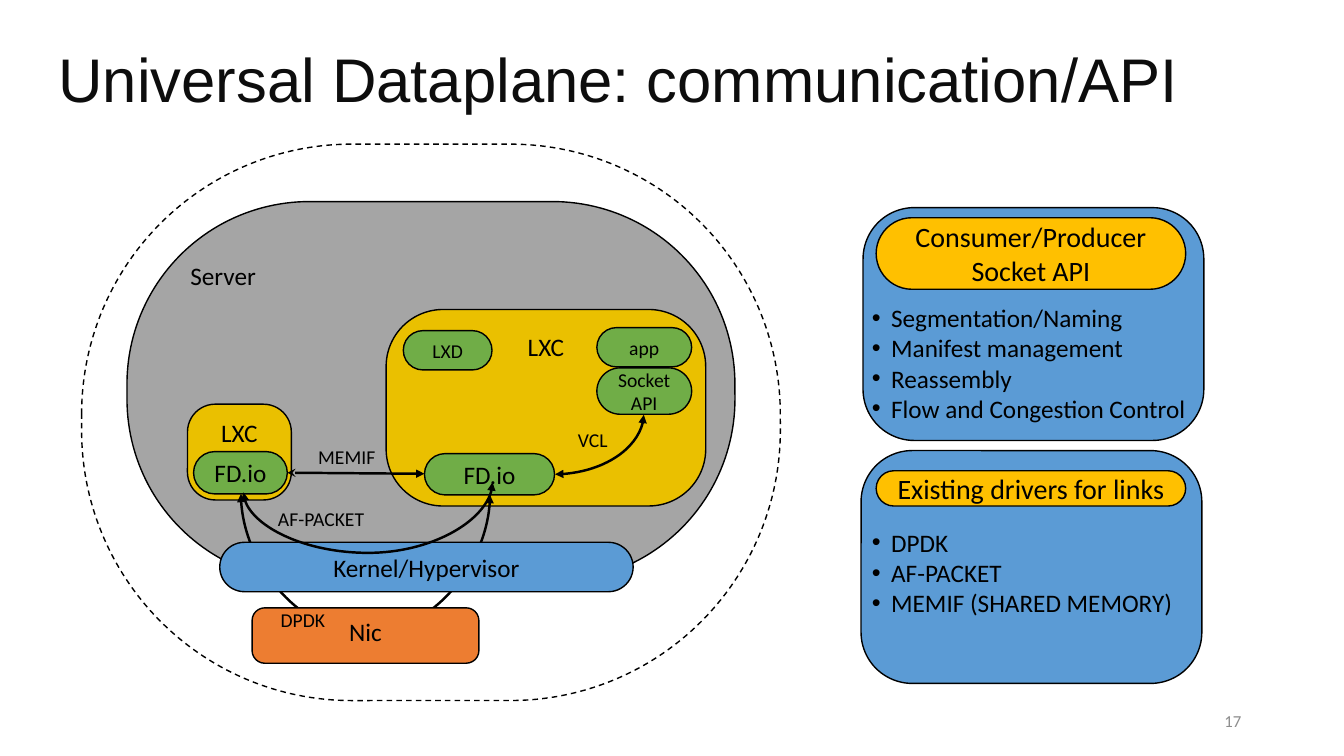
"""Build the Universal Dataplane communication/API slide."""
from pptx import Presentation
from pptx.dml.color import RGBColor
from pptx.enum.dml import MSO_LINE
from pptx.enum.shapes import MSO_CONNECTOR, MSO_SHAPE
from pptx.enum.text import MSO_ANCHOR, PP_ALIGN
from pptx.oxml.ns import qn
from pptx.util import Inches, Pt
from lxml import etree

ROUND = MSO_SHAPE.ROUNDED_RECTANGLE
CURVE, LINE = MSO_CONNECTOR.CURVE, MSO_CONNECTOR.STRAIGHT
DASH = MSO_LINE.DASH
TOP, MID = MSO_ANCHOR.TOP, MSO_ANCHOR.MIDDLE
LEFT, MIDDLE, RIGHT = PP_ALIGN.LEFT, PP_ALIGN.CENTER, PP_ALIGN.RIGHT
color = RGBColor.from_string
BLACK, GRAY, GOLD, GREEN = "000000", "A5A5A5", "EAC000", "70AD47"
BLUE, AMBER, ORANGE = "5B9BD5", "FFC000", "ED7D31"

deck = Presentation()
deck.slide_width, deck.slide_height = Inches(13.33), Inches(7.5)
slide = deck.slides.add_slide(deck.slide_layouts[6])


def box(text, x, y, w, h, fill=None, size=18, adj=0.5, anchor=MID, align=MIDDLE,
        dash=None, ink=BLACK, face="Calibri", space=1.0, bullet=False):
    place = [Inches(v) for v in (x, y, w, h)]
    if adj is None:
        shape = slide.shapes.add_textbox(*place)
    else:
        shape = slide.shapes.add_shape(ROUND, *place)
        shape.adjustments[0] = adj
        shape.shadow.inherit = False
        if fill:
            shape.fill.solid()
            shape.fill.fore_color.rgb = color(fill)
        else:
            shape.fill.background()
        if fill or dash:
            shape.line.color.rgb = color(BLACK)
            shape.line.width = Pt(1)
            shape.line.dash_style = dash
        else:
            shape.line.fill.background()
    frame = shape.text_frame
    frame.word_wrap, frame.vertical_anchor = True, anchor
    if not text:
        return
    for i, line in enumerate(text.split("\n")):
        para = frame.add_paragraph() if i else frame.paragraphs[0]
        para.alignment, para.line_spacing = align, space
        if bullet:
            props = para._p.get_or_add_pPr()
            props.set("marL", str(Inches(0.69)))
            props.set("indent", str(Inches(-0.19)))
            etree.SubElement(props, qn("a:buFont")).set("typeface", "Arial")
            etree.SubElement(props, qn("a:buChar")).set("char", "•")
        run = para.add_run()
        run.text = line
        for key, val in {"size": Pt(size), "name": face}.items():
            setattr(run.font, key, val)
        run.font.color.rgb = color(ink)


def link(kind, ends, head="triangle", preset=None, adj=None):
    wire = slide.shapes.add_connector(kind, *[Inches(v) for v in ends])
    wire.line.color.rgb = color(BLACK)
    wire.line.width = Pt(1.75)
    props = wire._element.spPr
    for tag, tip in (("a:headEnd", head), ("a:tailEnd", "triangle")):
        etree.SubElement(wire.line._get_or_add_ln(), qn(tag)).set("type", tip)
    etree.SubElement(props, qn("a:effectLst"))
    if preset:
        props.find(qn("a:xfrm")).set("rot", "5400000")
        geom = props.find(qn("a:prstGeom"))
        geom.set("prst", preset)
        if adj:
            guide = etree.SubElement(geom.find(qn("a:avLst")), qn("a:gd"))
            guide.set("name", "adj1")
            guide.set("fmla", f"val {round(adj * 100000)}")


box("Universal Dataplane: communication/API", 0.48, 0.19, 12.3, 1.25, size=44,
    adj=None, align=LEFT, ink="0D0D0D", face="Arial", space=0.9)

box("Server", 1.26, 2, 6.03, 3.77, GRAY, adj=0.48, anchor=TOP, align=LEFT)
box("", 0.81, 1.43, 6.93, 5.52, adj=0.485, dash=DASH)
for place in ((1.86, 4.01, 1.03, 0.95), (3.83, 3.07, 3.17, 1.95)):
    box("LXC", *place, GOLD, adj=0.29, anchor=TOP)
for text, size, *place in (
        ("FD.io", 18, 1.92, 4.48, 0.93, 0.42),
        ("FD.io", 18, 4.21, 4.5, 1.29, 0.41),
        ("Socket API", 14, 5.92, 3.65, 0.94, 0.46),
        ("app", 14, 5.92, 3.25, 0.94, 0.39),
        ("LXD", 14, 4, 3.28, 0.88, 0.39)):
    box(text, *place, GREEN, size)

link(LINE, (2.85, 4.69, 4.21, 4.7), head="stealth")
link(CURVE, (3.63, 3.67, 3.62, 6.14), preset="curvedConnector3", adj=-140)
box("Kernel/Hypervisor", 2.18, 5.38, 4.1, 0.49, BLUE)
link(CURVE, (3.6, 3.6, 3.7, 6.07), preset="curvedConnector3", adj=7)
link(CURVE, (5.65, 3.97, 6.24, 4.85), preset="curvedConnector2")
box("Nic", 2.5, 6.03, 2.25, 0.55, ORANGE, adj=0.23, anchor=TOP)

for text, x, y, w in (("VCL", 5.33, 4.17, 1.1), ("MEMIF", 2.89, 4.34, 1.1),
                      ("AF-PACKET", 2.5, 4.95, 1.37), ("DPDK", 2.32, 5.95, 1.37)):
    box(text, x, y, w, 0.39, size=14)

for x, y, head, top, tall, low, items in (
        (8.56, 2.06, "Consumer/Producer Socket API", 2.16, 0.71, 2.95,
         "Segmentation/Naming\nManifest management\nReassembly\nFlow and Congestion Control"),
        (8.54, 4.47, "Existing drivers for links", 4.67, 0.35, 5.18,
         "DPDK\nAF-PACKET\nMEMIF (SHARED MEMORY)")):
    box("", x, y, 3.38, 2.31, BLUE, adj=0.22)
    box(head, 8.69, top, 3.07, tall, AMBER, 20)
    box(items, 8.05, low, 4.38, 1.31, adj=None, anchor=TOP, align=LEFT, bullet=True)

box("17", 11.76, 6.95, 0.65, 0.4, size=12, adj=None, align=RIGHT, ink="8C8C8C")

deck.save("out.pptx")
